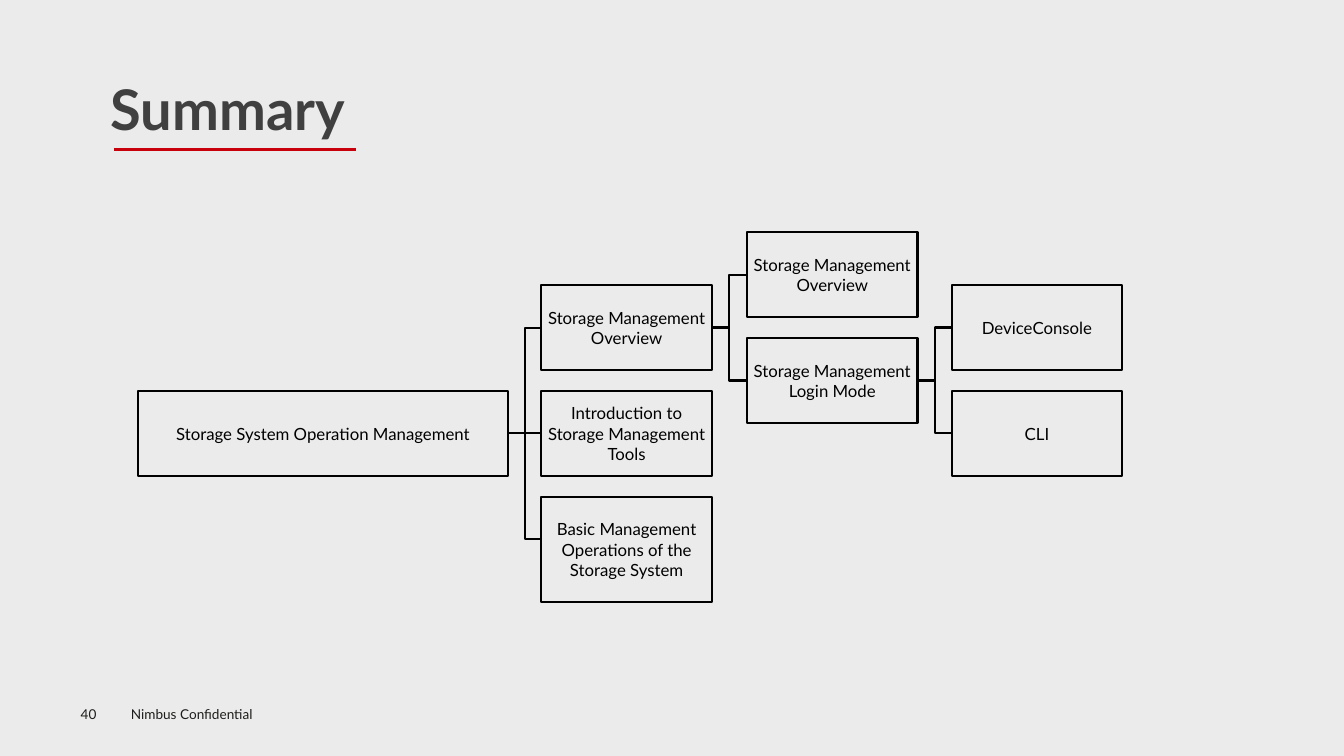
from lxml import etree
from pptx import Presentation
from pptx.dml.color import RGBColor
from pptx.enum.shapes import MSO_CONNECTOR as CONN, MSO_SHAPE
from pptx.enum.text import MSO_ANCHOR, PP_ALIGN
from pptx.oxml.ns import qn
from pptx.util import Inches, Pt

BACKGROUND = RGBColor(0xEB, 0xEB, 0xEB)
RED = RGBColor(0xC7, 0x00, 0x0B)
BLACK = RGBColor(0, 0, 0)
TITLE_GREY = RGBColor(0x40, 0x40, 0x40)
FOOTER_GREY = RGBColor(0x1D, 0x1D, 0x1B)

TITLE_FONT = dict(name="Lato", size=Pt(40), bold=True)
NODE_FONT = dict(name="Lato", size=Pt(12))
FOOTER_FONT = dict(name="Lato", size=Pt(9.7))

# text, (left, top, width, height), font, colour, (side inset, top inset)
LABELS = [
    ("Summary", (1, 0.69, 2.64, 0.77), TITLE_FONT, TITLE_GREY, (0.1, 0.05)),
    ("40", (0.8, 7, 0.55, 0.16), FOOTER_FONT, FOOTER_GREY, (0, 0)),
    ("Nimbus Confidential", (1.2, 6.95, 1.6, 0.27), FOOTER_FONT, FOOTER_GREY, (0.1, 0.05)),
]

# key: (text, column, row relative to the root, parent key)
NODES = {
    "root": ("Storage System Operation Management", 0, 0, None),
    "overview": ("Storage Management Overview", 1, -1, "root"),
    "tools": ("Introduction to Storage Management Tools", 1, 0, "root"),
    "operations": ("Basic Management Operations of the Storage System", 1, 1, "root"),
    "intro": ("Storage Management Overview", 2, -1.5, "overview"),
    "login": ("Storage Management Login Mode", 2, -0.5, "overview"),
    "device": ("DeviceConsole", 3, -1, "login"),
    "cli": ("CLI", 3, 0, "login"),
}
COLUMNS = [(1.37, 3.67), (5.37, 1.69), (7.41, 1.69), (9.44, 1.69)]  # left, width
ROOT_Y, ROW_PITCH, NODE_HEIGHT = 4.3, 1.05, 0.84
TALL_NODES = {"operations": 1.04}


def set_text(shape, text, font, color, insets, align=PP_ALIGN.LEFT, anchor=MSO_ANCHOR.TOP):
    tf = shape.text_frame
    side, top = map(Inches, insets)
    frame = dict(word_wrap=True, vertical_anchor=anchor, margin_left=side,
                 margin_right=side, margin_top=top, margin_bottom=top)
    for name, value in frame.items():
        setattr(tf, name, value)
    p = tf.paragraphs[0]
    p.alignment = align
    r = p.add_run()
    r.text = text
    for name, value in font.items():
        setattr(r.font, name, value)
    r.font.color.rgb = color


def add_line(s, kind, start, end, color, width):
    line = s.shapes.add_connector(kind, *map(Inches, (*start, *end)))
    line.line.color.rgb = color
    line.line.width = Pt(width)
    etree.SubElement(line._element.spPr, qn("a:effectLst"))


def row_y(row):
    return ROOT_Y + row * ROW_PITCH


def add_branch(s, parent, column, row):
    """Join the right side of the parent to the left side of its child."""
    _, parent_column, parent_row, _ = NODES[parent]
    left, width = COLUMNS[parent_column]
    kind = CONN.STRAIGHT if row == parent_row else CONN.ELBOW
    add_line(s, kind, (left + width, row_y(parent_row)),
             (COLUMNS[column][0], row_y(row)), BLACK, 1.5)


def add_node(s, key, text, column, row):
    left, width = COLUMNS[column]
    top = row_y(row) - NODE_HEIGHT / 2
    height = TALL_NODES.get(key, NODE_HEIGHT)
    sp = s.shapes.add_shape(MSO_SHAPE.RECTANGLE, *map(Inches, (left, top, width, height)))
    sp.shadow.inherit = False
    sp.fill.background()
    sp.line.color.rgb = BLACK
    sp.line.width = Pt(1.5)
    set_text(sp, text, NODE_FONT, BLACK, (0.04, 0.01), PP_ALIGN.CENTER, MSO_ANCHOR.MIDDLE)


def main():
    prs = Presentation()
    prs.slide_width, prs.slide_height = Inches(13.33), Inches(7.5)
    s = prs.slides.add_slide(prs.slide_layouts[6])
    s.background.fill.solid()
    s.background.fill.fore_color.rgb = BACKGROUND

    for text, box, font, color, insets in LABELS:
        set_text(s.shapes.add_textbox(*map(Inches, box)), text, font, color, insets)
    add_line(s, CONN.STRAIGHT, (1.13, 1.48), (3.53, 1.48), RED, 2.25)

    for _, column, row, parent in NODES.values():
        if parent:
            add_branch(s, parent, column, row)
    for key, (text, column, row, _) in NODES.items():
        add_node(s, key, text, column, row)

    prs.save("out.pptx")


if __name__ == "__main__":
    main()
